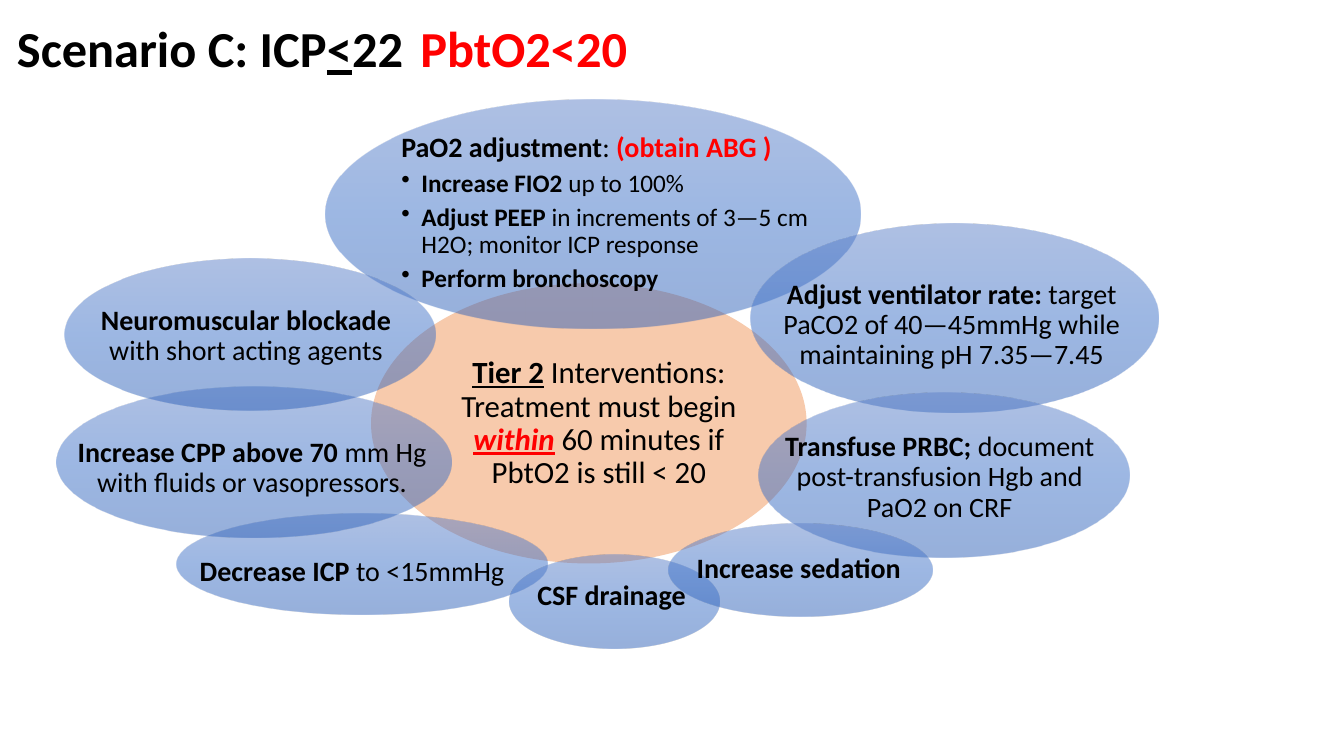
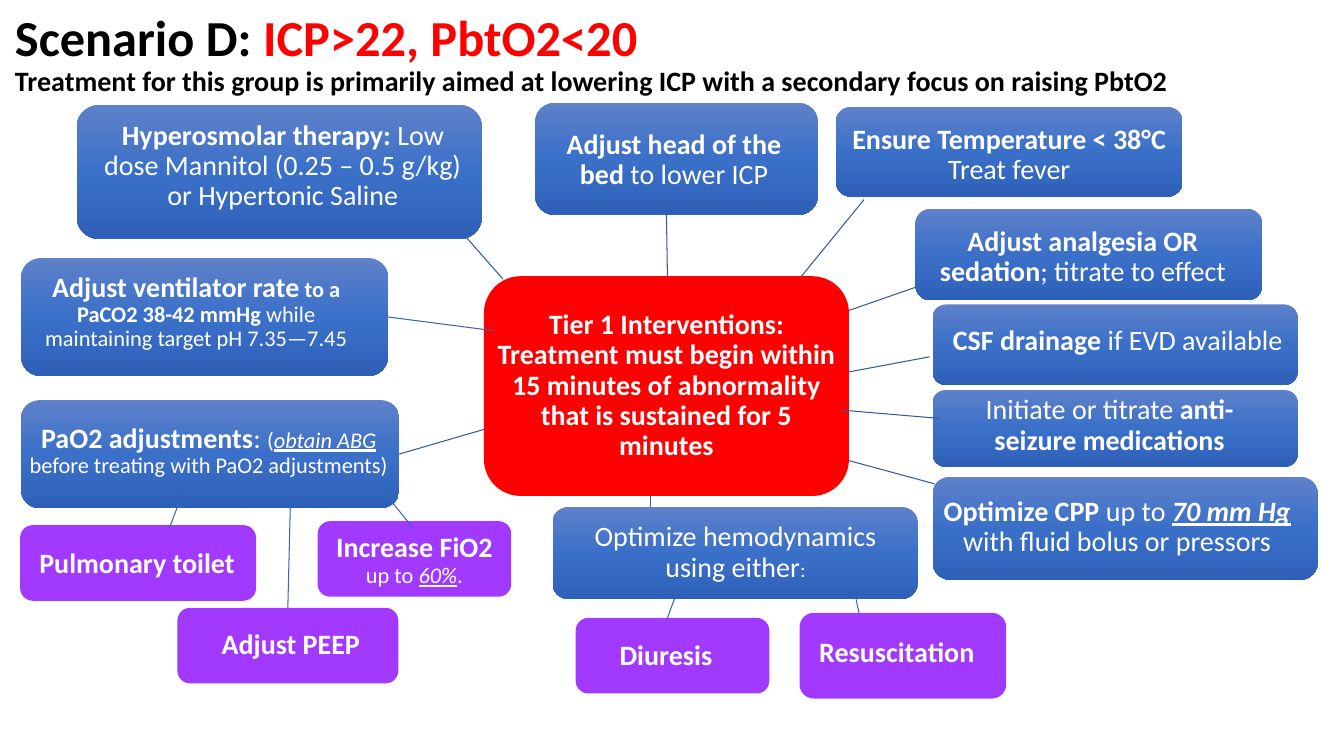
from lxml import etree
from pptx import Presentation
from pptx.dml.color import RGBColor
from pptx.enum.shapes import MSO_CONNECTOR, MSO_SHAPE
from pptx.enum.text import MSO_ANCHOR, PP_ALIGN
from pptx.oxml.ns import qn
from pptx.util import Inches, Pt

BLACK = RGBColor(0x00, 0x00, 0x00)
WHITE = RGBColor(0xFF, 0xFF, 0xFF)
RED = RGBColor(0xFF, 0x00, 0x00)
PEACH = RGBColor(0xF7, 0xCA, 0xAC)
PURPLE = RGBColor(0xA1, 0x39, 0xFF)
HUB_LINE = RGBColor(0x34, 0x5A, 0x99)
BRANCH_LINE = RGBColor(0x3A, 0x66, 0xB1)
BLUE_STOPS = [
    (0, RGBColor(0x5E, 0x81, 0xC9)),
    (50, RGBColor(0x3B, 0x70, 0xC9)),
    (100, RGBColor(0x2E, 0x60, 0xB8)),
]
BLUE = "gradient"
FONT = "Calibri"
STRAIGHT = MSO_CONNECTOR.STRAIGHT
OVAL = MSO_SHAPE.OVAL
ROUNDED = MSO_SHAPE.ROUNDED_RECTANGLE
MIDDLE, BOTTOM = MSO_ANCHOR.MIDDLE, MSO_ANCHOR.BOTTOM
LEFT, CENTER = PP_ALIGN.LEFT, PP_ALIGN.CENTER
TOP_SITE, RIGHT_SITE = 0, 3

# Span styles: b bold, i italic, u underlined, r red; an optional third item is the size.
OVALS = [
    ((3.68, 2.81, 4.32, 2.78), (0.64, 0.41, 3.24, 1.97), PEACH, CENTER, 22, [[
        ("Tier 2", "bu"), (" Interventions: Treatment must begin ", ""),
        ("within", "biur"), (" 60 minutes if PbtO2 is still < 20", "")]]),
    ((3.23, 0.99, 5.3, 2.27), (0.72, 0.34, 4.32, 1.57), BLUE, LEFT, 20, [
        [("PaO2 adjustment", "b"), (": ", ""), ("(obtain ABG )", "br")],
        [("Increase FIO2 ", "b", 18), ("up to 100%", "", 18)],
        [("Adjust PEEP", "b", 18),
         (" in increments of 3—5 cm H2O; monitor ICP response", "", 18)],
        [("Perform bronchoscopy", "b", 18)]]),
    ((7.45, 2.22, 4.04, 1.87), (0.29, 0.22, 3.4, 1.58), BLUE, CENTER, 20, [[
        ("Adjust ventilator rate:", "b"),
        (" target PaCO2 of 40—45mmHg while maintaining pH 7.35—7.45", "")]]),
    ((7.52, 3.9, 3.68, 1.63), (0.09, 0.05, 3.42, 1.58), BLUE, CENTER, 20, [[
        ("Transfuse PRBC; ", "b"),
        ("document post-transfusion Hgb and PaO2 on CRF", "")]]),
    ((1.75, 5.1, 3.68, 1), (0.2, 0.2, 3.15, 0.75), BLUE, LEFT, 20, [[
        ("Decrease ICP ", "b"), ("to <15mmHg", "")]]),
    ((0.56, 3.84, 3.92, 1.49), (0.15, 0.12, 3.58, 1.37), BLUE, CENTER, 20, [[
        ("Increase CPP above 70 ", "b"),
        ("mm Hg with fluids or vasopressors.", "")]]),
    ((0.64, 2.57, 3.68, 1.5), (0.29, 0.29, 3.02, 0.95), BLUE, CENTER, 20, [[
        ("Neuromuscular blockade ", "b"), ("with short acting agents", "")]]),
    ((5.05, 5.5, 2.09, 0.93), (0.25, 0.11, 1.84, 0.61), BLUE, LEFT, 20, [[
        ("CSF drainage", "b")]]),
    ((6.63, 5.19, 2.62, 0.93), (0.25, 0.15, 2.44, 0.61), BLUE, LEFT, 20, [[
        ("Increase sedation", "b")]]),
]

CARDS = {
    "tier": ((4.8, 2.74, 3.62, 2.18), (0.06, 0.23, 3.5, 1.72), RED, [
        ("Tier 1 Interventions: Treatment must begin within 15 minutes of "
         "abnormality that is sustained for 5 minutes", "b")]),
    "head": ((5.31, 1.02, 2.8, 1.11), (0.13, 0.11, 2.49, 0.93), BLUE, [
        ("Adjust head of the bed ", "b"), ("to lower ICP", "")]),
    "temperature": ((8.29, 1.06, 3.44, 0.89), (0.09, 0.09, 3.26, 0.78), BLUE, [
        ("Ensure Temperature < 38°C ", "b"), ("Treat fever", "")]),
    "analgesia": ((9.08, 2.07, 3.44, 0.91), (0.02, 0.03, 3.28, 0.91), BLUE, [
        ("Adjust analgesia OR sedation", "b"), ("; titrate to effect", "")]),
    "drainage": ((9.25, 3.02, 3.62, 0.8), (0.15, -0.03, 3.37, 0.8), BLUE, [
        ("CSF drainage ", "b"), ("if EVD available", "")]),
    "seizure": ((9.25, 3.87, 3.62, 0.76), (0.35, -0.06, 2.81, 0.83), BLUE, [
        ("Initiate or titrate ", ""), ("anti-seizure medications", "b")]),
    "perfusion": ((9.25, 4.73, 3.82, 1.02), (0.02, 0.07, 3.62, 0.87), BLUE, [
        ("Optimize CPP ", "b"), ("up to ", ""), ("70 mm Hg ", "biu"),
        ("with fluid bolus or pressors", "")]),
    "hemodynamics": ((5.48, 5.03, 3.62, 0.91), (0.15, -0.01, 3.33, 0.93), BLUE, [
        ("Optimize hemodynamics using either", ""), (":", "", 15)]),
    "resuscitation": ((7.93, 6.08, 2.05, 0.85), (0, 0.02, 1.93, 0.76), PURPLE, [
        ("Resuscitation", "b")]),
    "diuresis": ((5.71, 6.13, 1.92, 0.75), (0.13, 0.06, 1.53, 0.64), PURPLE, [
        ("Diuresis", "b")]),
    "hyperosmolar": ((0.76, 1.04, 4.02, 1.33), (0.19, -0.05, 3.71, 1.32), BLUE, [
        ("Hyperosmolar therapy: ", "b"),
        ("Low dose Mannitol (0.25 – 0.5 g/kg) or Hypertonic Saline", "")]),
    "ventilator": ((0.21, 2.56, 3.64, 1.17), (-0.01, 0.13, 3.49, 0.82), BLUE, [
        ("Adjust ventilator rate", "b"), (" to a PaCO2 38-42 mmHg ", "b", 16),
        ("while maintaining target pH 7.35—7.45", "", 16)]),
    "oxygen": ((0.21, 3.97, 3.75, 1.07), (0.02, -0.03, 3.68, 1.07), BLUE, [
        ("PaO2 adjustments", "b"), (": ", ""), ("(", "", 16),
        ("obtain ABG ", "iu", 16),
        ("before treating with PaO2 adjustments)", "", 16)]),
    "toilet": ((0.2, 5.21, 2.34, 0.75), (0.01, 0.15, 2.3, 0.48), PURPLE, [
        ("Pulmonary toilet", "b")]),
    "fio2": ((3.15, 5.17, 1.92, 0.75), (0.05, 0.03, 1.82, 0.73), PURPLE, [
        ("Increase FiO2 ", "b"), ("up to ", "", 16), ("60%", "iu", 16),
        (".", "", 16)]),
    "peep": ((1.76, 6.03, 2.19, 0.75), (0.09, -0.04, 2.07, 0.82), PURPLE, [
        ("Adjust PEEP", "b")]),
}

HUB_LINKS = [
    ((8.42, 4.57), (9.27, 4.8)),
    ((4.8, 4.26), ("oxygen", RIGHT_SITE)),
    ((4.99, 2.77), (4.62, 2.35)),
    ((6.45, 4.92), (6.45, 5.03)),
    ((8.42, 3.69), (9.22, 3.54)),
    ((8.42, 3.08), (9.08, 2.85)),
    ((7.95, 2.74), (8.57, 1.98)),
    ((6.62, 2.74), (6.61, 2.13)),
    ((8.36, 4.07), (9.31, 4.15)),
]
BRANCH_LINKS = [
    ((8.49, 5.94), (8.52, 6.08)),
    ((6.69, 5.94), (6.62, 6.13)),
    ((4.89, 3.28), ("ventilator", RIGHT_SITE)),
    ((3.83, 4.91), (4.09, 5.23)),
    ((1.82, 4.87), (1.68, 5.24)),
    ((2.88, 4.99), ("peep", TOP_SITE)),
]


def add_bullet(para):
    """Give a paragraph a hanging round bullet."""
    para.space_before = Pt(4.9)
    props = para._p.get_or_add_pPr()
    props.set("marL", str(Inches(0.2)))
    props.set("indent", str(-Inches(0.2)))
    etree.SubElement(props, qn("a:buChar")).set("char", "•")


def add_text(page, box, paragraphs, size, color, align=LEFT, anchor=MIDDLE,
             margins=(0.03, 0.03)):
    """Place a text box; in left-aligned labels later paragraphs are bulleted."""
    frame = page.shapes.add_textbox(*map(Inches, box)).text_frame
    frame.word_wrap = True
    frame.vertical_anchor = anchor
    frame.margin_left = frame.margin_right = Inches(margins[0])
    frame.margin_top = frame.margin_bottom = Inches(margins[1])
    for index, spans in enumerate(paragraphs):
        para = frame.add_paragraph() if index else frame.paragraphs[0]
        para.alignment = align
        para.line_spacing = 0.9
        if index and anchor == MIDDLE:
            add_bullet(para)
        for text, style, *own_size in spans:
            span = para.add_run()
            span.text = text
            font = span.font
            font.name = FONT
            font.size = Pt(own_size[0] if own_size else size)
            font.bold = "b" in style
            font.italic = "i" in style
            font.underline = "u" in style
            font.color.rgb = RED if "r" in style else color


def add_title(page, box, paragraphs):
    """Place the bold slide title, standing on the bottom of its box."""
    add_text(page, box, paragraphs, 36, BLACK, anchor=BOTTOM, margins=(0.1, 0.05))


def fill_blue(shape, opacity):
    """Fill a shape with the shared three-stop vertical gradient."""
    shape.fill.gradient()
    shape.fill.gradient_angle = 270
    stops = shape._element.spPr.find(qn("a:gradFill")).find(qn("a:gsLst"))
    for stop in list(stops):
        stops.remove(stop)
    for percent, color in BLUE_STOPS:
        stop = etree.SubElement(stops, qn("a:gs"), pos=str(percent * 1000))
        tint = etree.SubElement(stop, qn("a:srgbClr"), val=str(color))
        if opacity < 100:
            etree.SubElement(tint, qn("a:alpha"), val=str(opacity * 1000))


def add_node(page, preset, box, label, fill, paragraphs, size, color, align,
             opacity=100):
    """Draw a filled shape and its label, offset from the shape's corner."""
    shape = page.shapes.add_shape(preset, *map(Inches, box))
    shape.shadow.inherit = False
    shape.line.fill.background()
    if fill == BLUE:
        fill_blue(shape, opacity)
    else:
        shape.fill.solid()
        shape.fill.fore_color.rgb = fill
    left, top, width, height = label
    add_text(page, (box[0] + left, box[1] + top, width, height), paragraphs,
             size, color, align)
    return shape


def add_link(page, start, end, cards, color):
    """Draw a thin line from a point to a point or to a named card's side."""
    glued = end[0] in cards
    target = start if glued else end
    link = page.shapes.add_connector(STRAIGHT, *map(Inches, start + target))
    if glued:
        link.end_connect(cards[end[0]], end[1])
    link.line.color.rgb = color
    link.line.width = Pt(0.75)
    etree.SubElement(link._element.spPr, qn("a:effectLst"))


def build_oval_page(page):
    """Scenario C: overlapping ovals around the Tier 2 core."""
    add_title(page, (0.07, 0.06, 9.42, 0.77), [[
        ("Scenario C: ICP", "b"), ("<", "bu"), ("22\t", "b"), ("PbtO2<20", "br")]])
    for box, label, fill, align, size, paragraphs in OVALS:
        add_node(page, OVAL, box, label, fill, paragraphs, size, BLACK, align, 50)


def build_card_page(page):
    """Scenario D: cards linked to the Tier 1 hub."""
    add_title(page, (0.05, 0.14, 11.88, 0.88), [
        [("Scenario D: ", "b"), ("ICP>22, PbtO2<20", "br")],
        [("Treatment for this group is primarily aimed at lowering ICP with a "
          "secondary focus on raising PbtO2", "b", 20)]])
    cards = {name: add_node(page, ROUNDED, box, label, fill, [spans], 20, WHITE, CENTER)
             for name, (box, label, fill, spans) in CARDS.items()}
    for links, color in ((HUB_LINKS, HUB_LINE), (BRANCH_LINKS, BRANCH_LINE)):
        for start, end in links:
            add_link(page, start, end, cards, color)


def main():
    """Build and save the deck."""
    deck = Presentation()
    deck.slide_width, deck.slide_height = Inches(13.33), Inches(7.5)
    for build in (build_oval_page, build_card_page):
        build(deck.slides.add_slide(deck.slide_layouts[6]))
    deck.save("out.pptx")


if __name__ == "__main__":
    main()
